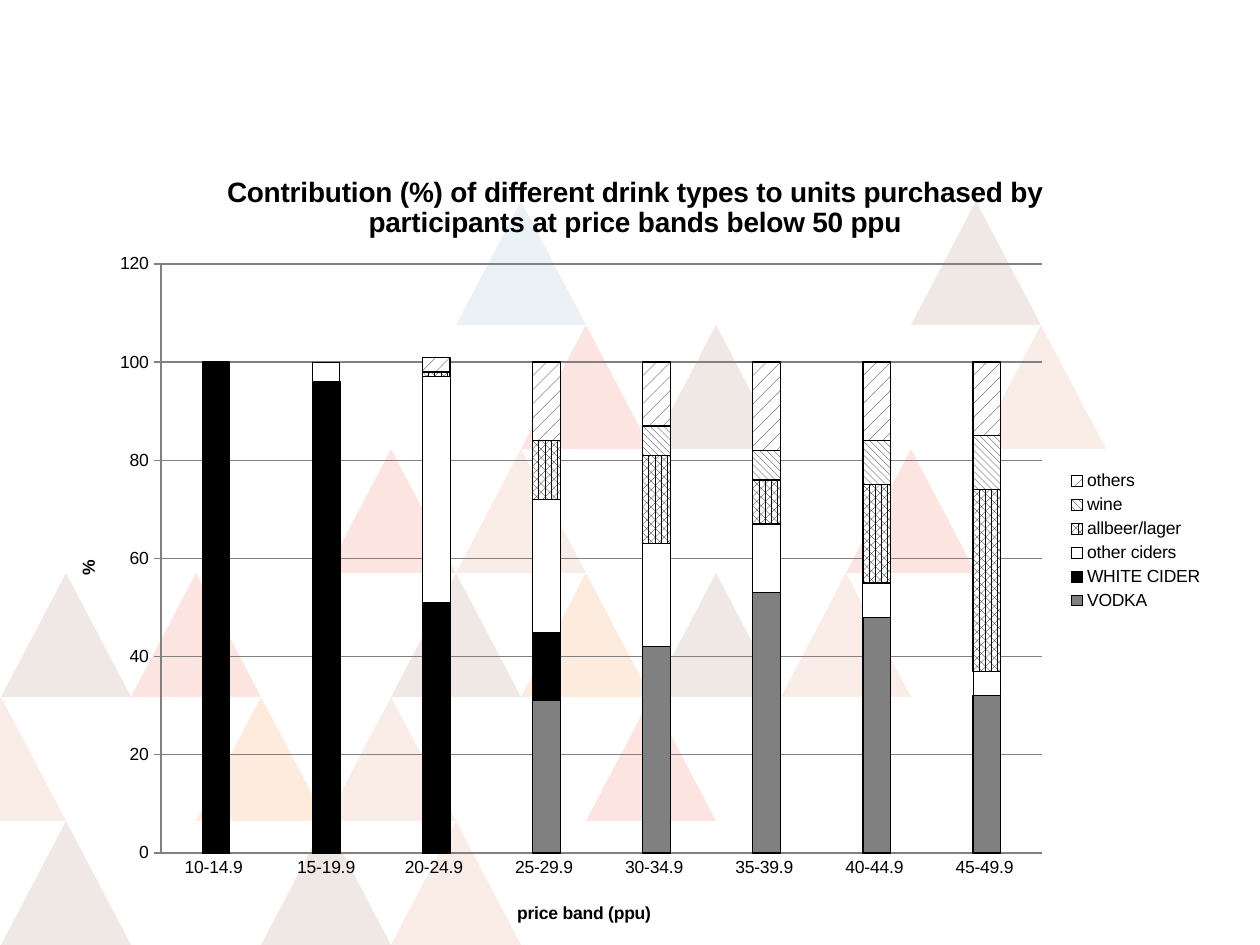
from lxml import etree
from pptx import Presentation
from pptx.chart.data import CategoryChartData
from pptx.dml.color import RGBColor
from pptx.enum.chart import XL_CHART_TYPE as ChartType, XL_LEGEND_POSITION as LegendPosition, XL_TICK_MARK as TickMark
from pptx.enum.dml import MSO_PATTERN as Pattern
from pptx.oxml.ns import qn
from pptx.util import Pt

PX = 914400 // 126
BLACK, WHITE = RGBColor(0, 0, 0), RGBColor(255, 255, 255)
GRAY, INK = RGBColor(0x80, 0x80, 0x80), RGBColor(0x0D, 0x0D, 0x0D)
RED, ORANGE = RGBColor(0xEF, 0x61, 0x3F), RGBColor(0xF3, 0x7F, 0x21)
BROWN, RUST = RGBColor(0x6A, 0x21, 0x00), RGBColor(0xD5, 0x4A, 0x19)
BLUE = RGBColor(0x3B, 0x88, 0xA5)
ALPHA = {RED: 16, ORANGE: 15, BROWN: 10, RUST: 10, BLUE: 10}

TRIANGLE_ROWS = [
    [(7, BLUE), (14, BROWN)],
    [(8, RED), (10, BROWN), (15, RUST)],
    [(5, RED), (7, RUST), (13, RED)],
    [(0, BROWN), (2, RED), (6, BROWN), (8, ORANGE), (10, BROWN), (12, RUST)],
    [(-1, RUST), (3, ORANGE), (5, RUST), (9, RED)],
    [(0, BROWN), (4, BROWN), (6, RUST)],
]
GRID_LEFT, GRID_TOP, HALF_WIDTH, ROW_HEIGHT = 1, 201, 65, 124

TITLE = ("Contribution (%) of different drink types to units purchased by "
         "participants at price bands below 50 ppu")
PRICE_BANDS = ["10-14.9 ", "15-19.9", "20-24.9 ", "25-29.9 ", "30-34.9 ", "35-39.9 ", "40-44.9 ", "45-49.9 "]
DRINKS = [
    ("VODKA", [0, 0, 0, 31, 42, 53, 48, 32], GRAY, 0.75),
    ("WHITE CIDER", [100, 96, 51, 14, 0, 0, 0, 0], BLACK, 0.75),
    ("other ciders", [0, 4, 46, 27, 21, 14, 7, 5], WHITE, 0.5),
    ("allbeer/lager", [0, 0, 1, 12, 18, 9, 20, 37], Pattern.PERCENT_70, 0.75),
    ("wine", [0, 0, 0, 0, 6, 6, 9, 11], Pattern.WIDE_DOWNWARD_DIAGONAL, 0.75),
    ("others", [0, 0, 3, 16, 13, 18, 16, 15], Pattern.PERCENT_10, 0.75),
]
CHART_BOX = (44, 139, 1170, 806)
PLOT_BOX = (161, 264, 881, 589)
LEGEND_BOX = (1066, 467, 140, 148)
TITLE_POINTS = [(222, 169), (514, 899), (74, 557)]


def add_triangle(slide, column, row, color):
    left, top = GRID_LEFT + column * HALF_WIDTH, GRID_TOP + row * ROW_HEIGHT
    bottom = top + ROW_HEIGHT
    builder = slide.shapes.build_freeform(left + HALF_WIDTH, top, PX)
    builder.add_line_segments([(left + 2 * HALF_WIDTH, bottom), (left, bottom)])
    shape = builder.convert_to_shape()
    shape.shadow.inherit = False
    shape.line.fill.background()
    shape.fill.solid()
    shape.fill.fore_color.rgb = color
    solid_color = shape.element.spPr.find(".//" + qn("a:srgbClr"))
    etree.SubElement(solid_color, qn("a:alpha")).set("val", str(ALPHA[color] * 1000))


def style_font(font, size, bold=False):
    font.name, font.size, font.bold = "Arial", Pt(size), bold
    font.color.rgb = BLACK


def set_title(owner_title, text, size):
    run = owner_title.text_frame.paragraphs[0].add_run()
    run.text = text
    style_font(run.font, size, True)


def place(element, index, box, inner=False):
    for old in element.findall(qn("c:layout")):
        element.remove(old)
    layout = etree.Element(qn("c:layout"))
    manual = etree.SubElement(layout, qn("c:manualLayout"))
    left, top, width, height = CHART_BOX
    values = [(box[0] - left) / width, (box[1] - top) / height]
    values += [size / whole for size, whole in zip(box[2:], (width, height))]
    settings = [("layoutTarget", "inner")] if inner else []
    settings += [("xMode", "edge"), ("yMode", "edge")]
    settings += [(name, f"{value:.4f}") for name, value in zip("xywh", values)]
    for name, value in settings:
        etree.SubElement(manual, qn("c:" + name)).set("val", value)
    element.insert(index, layout)


def style_series(series, look, line_width):
    fill = series.format.fill
    if isinstance(look, RGBColor):
        fill.solid()
        fill.fore_color.rgb = look
    else:
        fill.patterned()
        fill.pattern = look
        fill.fore_color.rgb, fill.back_color.rgb = INK, WHITE
    series.format.line.color.rgb = BLACK
    series.format.line.width = Pt(line_width)
    series.invert_if_negative = False


def add_drinks_chart(slide):
    data = CategoryChartData()
    data.categories = PRICE_BANDS
    for name, values, _, _ in DRINKS:
        data.add_series(name, values)
    frame = slide.shapes.add_chart(ChartType.COLUMN_STACKED, *(n * PX for n in CHART_BOX), data)
    chart = frame.chart
    style_font(chart.font, 10)
    chart.has_title = True
    set_title(chart.chart_title, TITLE, 16)

    plot = chart.plots[0]
    plot.gap_width, plot.overlap, plot.vary_by_categories = 300, 100, False
    for series, (_, _, look, line_width) in zip(plot.series, DRINKS):
        style_series(series, look, line_width)

    axes = [(chart.category_axis, "price band (ppu)", TickMark.NONE),
            (chart.value_axis, "%", TickMark.OUTSIDE)]
    for axis, text, tick in axes:
        axis.has_title = True
        set_title(axis.axis_title, text, 10)
        axis.major_tick_mark, axis.minor_tick_mark = tick, TickMark.NONE
        axis.format.line.color.rgb = GRAY
        style_font(axis.tick_labels.font, 10)
    value_axis = chart.value_axis
    value_axis.minimum_scale, value_axis.maximum_scale, value_axis.major_unit = 0, 120, 20
    value_axis.has_major_gridlines = True
    value_axis.major_gridlines.format.line.color.rgb = GRAY

    chart.has_legend = True
    chart.legend.position = LegendPosition.RIGHT
    chart.legend.include_in_layout = False
    style_font(chart.legend.font, 10)

    root = chart.element
    place(root.find(".//" + qn("c:plotArea")), 0, PLOT_BOX, True)
    place(root.find(".//" + qn("c:legend")), 1, LEGEND_BOX)
    for title, point in zip(root.iter(qn("c:title")), TITLE_POINTS):
        place(title, 1, point)


def main():
    """Build the slide with stacked drink shares over a triangle background."""
    presentation = Presentation()
    presentation.slide_width, presentation.slide_height = 1260 * PX, 945 * PX
    slide = presentation.slides.add_slide(presentation.slide_layouts[6])
    for row, triangles in enumerate(TRIANGLE_ROWS):
        for column, color in triangles:
            add_triangle(slide, column, row, color)
    add_drinks_chart(slide)
    presentation.save("out.pptx")


if __name__ == "__main__":
    main()
